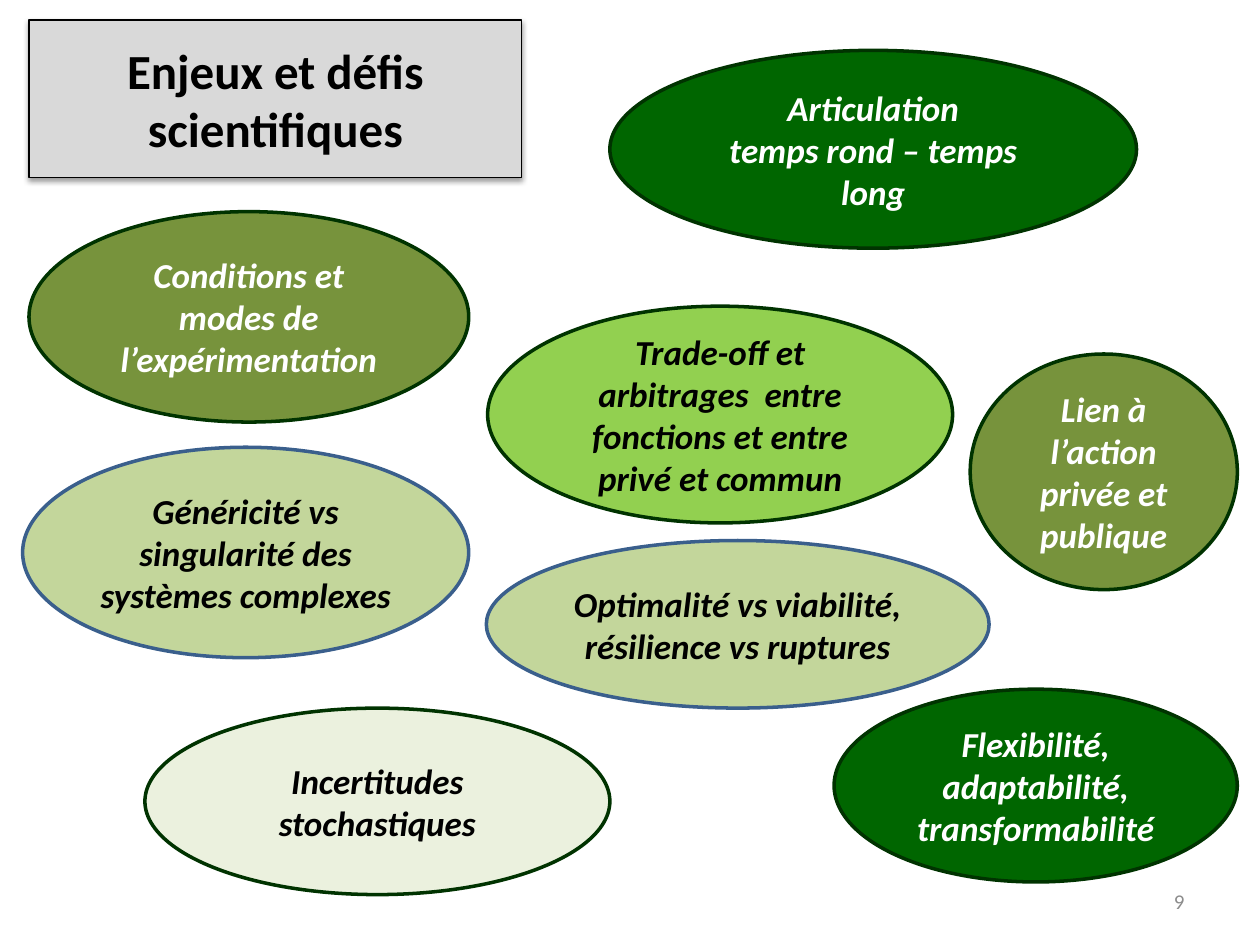
"""Build the slide on scientific challenges: a title box and eight ellipses."""
from lxml import etree
from pptx import Presentation
from pptx.dml.color import RGBColor
from pptx.enum.shapes import MSO_SHAPE
from pptx.enum.text import MSO_ANCHOR, PP_ALIGN
from pptx.oxml.ns import qn
from pptx.util import Inches, Pt

ELLIPSE, BOX = MSO_SHAPE.OVAL, MSO_SHAPE.ROUNDED_RECTANGLE
MIDDLE = MSO_ANCHOR.MIDDLE
CENTER, RIGHT = PP_ALIGN.CENTER, PP_ALIGN.RIGHT

BLACK = RGBColor(0x00, 0x00, 0x00)
WHITE = RGBColor(0xFF, 0xFF, 0xFF)
SILVER = RGBColor(0xD9, 0xD9, 0xD9)
GREY = RGBColor(0x8C, 0x8C, 0x8C)
FOREST = RGBColor(0x00, 0x66, 0x00)
PINE = RGBColor(0x00, 0x33, 0x00)
OLIVE = RGBColor(0x77, 0x93, 0x3C)
SAGE = RGBColor(0xC3, 0xD6, 0x9B)
LIME = RGBColor(0x92, 0xD0, 0x50)
MIST = RGBColor(0xEB, 0xF1, 0xDE)
BLUE = RGBColor(0x3A, 0x5F, 0x8C)

TITLE = {"name": "Calibri", "size": Pt(28), "bold": True}
THEME = {"name": "Calibri", "size": Pt(20), "bold": True, "italic": True}
NUMBER = {"name": "Calibri", "size": Pt(12)}

prs = Presentation()
prs.slide_width, prs.slide_height = Inches(10), Inches(7.5)
COL, ROW = prs.slide_width / 100, prs.slide_height / 75
s = prs.slides.add_slide(prs.slide_layouts[6])


def place(x, y, w, h):
    return int(x * COL), int(y * ROW), int(w * COL), int(h * ROW)


def write(sp, text, color, fmt, align=CENTER):
    tf = sp.text_frame
    tf.word_wrap = True
    tf.vertical_anchor = MIDDLE
    p = tf.paragraphs[0]
    p.text = text
    p.alignment = align
    for r in p.runs:
        r.font.color.rgb = color
        for key, value in fmt.items():
            setattr(r.font, key, value)


shapes = [
    (BOX, (2.3, 1.6, 39.1, 12.5), SILVER, BLACK, 0.75, BLACK, TITLE,
     "Enjeux et défis scientifiques"),
]
themes = [
    ((2.3, 16.8, 34.9, 16.7), OLIVE, PINE, WHITE,
     "Conditions et modes de l’expérimentation"),
    ((48.4, 4, 41.8, 15.7), FOREST, PINE, WHITE,
     "Articulation\vtemps rond – temps long"),
    ((1.8, 35.5, 35.4, 16.7), SAGE, BLUE, BLACK,
     "Généricité vs singularité des systèmes complexes"),
    ((38.7, 24.3, 36.9, 17.2), LIME, PINE, BLACK,
     "Trade-off et arbitrages  entre fonctions et entre privé et commun"),
    ((11.5, 56.2, 36.9, 14.8), MIST, PINE, BLACK,
     "Incertitudes stochastiques"),
    ((38.6, 42.9, 39.9, 13.3), SAGE, BLUE, BLACK,
     "Optimalité vs viabilité, résilience vs ruptures"),
    ((66.2, 54.7, 32, 15.3), FOREST, PINE, WHITE,
     "Flexibilité, adaptabilité, transformabilité"),
    ((77, 28.1, 21.2, 18.7), OLIVE, PINE, WHITE,
     "Lien à l’action privée et publique"),
]
shapes += [(ELLIPSE, at, fill, line, 2, color, THEME, text)
           for at, fill, line, color, text in themes]

for kind, at, fill, line, width, color, fmt, text in shapes:
    sp = s.shapes.add_shape(kind, *place(*at))
    sp.shadow.inherit = False
    sp.fill.solid()
    sp.fill.fore_color.rgb = fill
    sp.line.color.rgb = line
    sp.line.width = Pt(width)
    write(sp, text, color, fmt)
    if kind == BOX:
        sp.adjustments[0] = 0
        effects = sp.element.spPr.find(qn("a:effectLst"))
        shadow = etree.SubElement(
            effects, qn("a:outerShdw"), blurRad=str(Pt(3.1)),
            dist=str(Pt(1.6)), dir="5400000", rotWithShape="0")
        tint = etree.SubElement(shadow, qn("a:srgbClr"), val=str(BLACK))
        etree.SubElement(tint, qn("a:alpha"), val="38000")

sp = s.shapes.add_textbox(*place(71.7, 69.5, 23.3, 4))
write(sp, "9", GREY, NUMBER, RIGHT)

prs.save("out.pptx")
